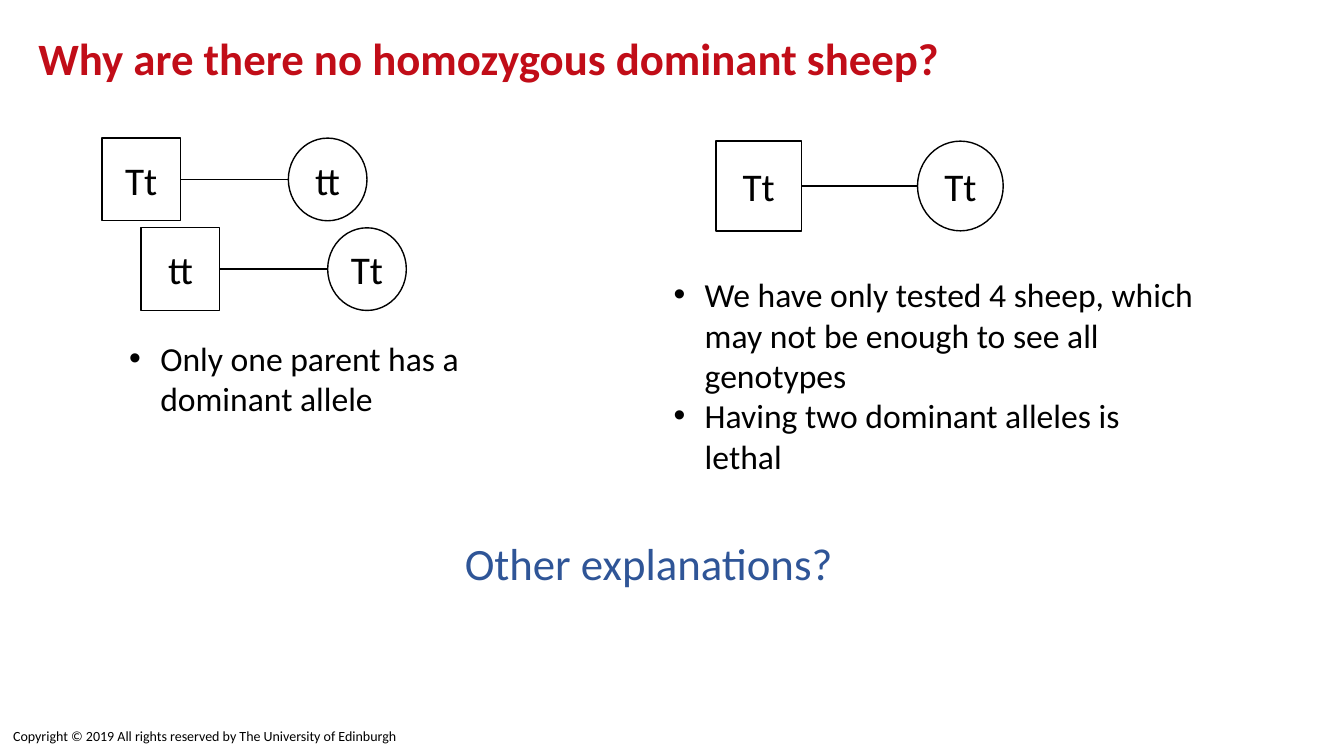
from lxml.etree import SubElement
from pptx import Presentation
from pptx.dml.color import RGBColor
from pptx.enum.shapes import MSO_CONNECTOR, MSO_SHAPE
from pptx.enum.text import MSO_ANCHOR, MSO_AUTO_SIZE, PP_ALIGN
from pptx.oxml.ns import qn
from pptx.util import Inches, Pt

RED = RGBColor(0xC1, 0x0D, 0x18)
BLUE = RGBColor(0x2F, 0x55, 0x97)
BLACK = RGBColor(0, 0, 0)

TITLE = "Why are there no homozygous dominant sheep?"
QUESTION = "Other explanations?"
COPYRIGHT = "Copyright © 2019 All rights reserved by The University of Edinburgh"
# Each cross: male, female, left, top, symbol width, symbol height, line length
CROSSES = [
    ("Tt", "tt", 1.01, 1.37, 0.78, 0.82, 1.07),
    ("tt", "Tt", 1.4, 2.26, 0.78, 0.82, 1.07),
    ("Tt", "Tt", 7.1, 1.4, 0.85, 0.89, 1.15),
]
EXPLANATIONS = [
    ((1.18, 3.3, 3.84, 0.91), ["Only one parent has a dominant allele"]),
    ((6.58, 2.67, 5.39, 2.12), [
        "We have only tested 4 sheep, which may not be enough to see all genotypes",
        "Having two dominant alleles is lethal",
    ]),
]

CENTRED = {"alignment": PP_ALIGN.CENTER}
TIGHT = {"line_spacing": 0.9}
LEFT = {"alignment": PP_ALIGN.LEFT}
PLAIN = {"space_before": Pt(0), "line_spacing": 1.0}
MIDDLE = {"vertical_anchor": MSO_ANCHOR.MIDDLE}
TOP = {"vertical_anchor": MSO_ANCHOR.TOP}
SIDES = ("margin_left", "margin_top", "margin_right", "margin_bottom")
BULLET_INDENT = Inches(0.31)


def apply(target, values):
    """Set every format value on the target."""
    for name, value in values.items():
        setattr(target, name, value)


def place(part, box):
    """Move and size a part, in inches."""
    apply(part, dict(zip(("left", "top", "width", "height"), map(Inches, box))))


def write(part, lines, size, color=BLACK, bold=False, frame={}, layout={}, bullets=False):
    """Fill a part with formatted paragraphs."""
    text_frame = part.text_frame
    text_frame.text = "\n".join(lines)
    apply(text_frame, {"word_wrap": True, "auto_size": MSO_AUTO_SIZE.NONE, **frame})
    for paragraph in text_frame.paragraphs:
        if bullets:
            properties = paragraph._p.get_or_add_pPr()
            properties.set("marL", str(BULLET_INDENT))
            properties.set("indent", str(-BULLET_INDENT))
            SubElement(properties, qn("a:buFont"), typeface="Arial")
            SubElement(properties, qn("a:buChar"), char="•")
        apply(paragraph, {**PLAIN, **layout})
        for run in paragraph.runs:
            apply(run.font, {"name": "Calibri", "size": Pt(size), "bold": bold})
            run.font.color.rgb = color


def outline(line):
    """Draw a thin black line."""
    line.color.rgb = BLACK
    line.width = Pt(1)


def add_cross(slide, male, female, left, top, width, height, gap):
    """Draw a square male joined to a round female."""
    parents = [(MSO_SHAPE.RECTANGLE, male, left),
               (MSO_SHAPE.OVAL, female, left + width + gap)]
    for symbol, genotype, x in parents:
        parent = slide.shapes.add_shape(symbol, *map(Inches, (x, top, width, height)))
        parent.shadow.inherit = False
        parent.fill.background()
        outline(parent.line)
        write(parent, [genotype], 28, layout=CENTRED,
              frame={**MIDDLE, **dict.fromkeys(SIDES, 0), "word_wrap": False})
    middle = top + height / 2
    mating = slide.shapes.add_connector(
        MSO_CONNECTOR.STRAIGHT,
        *map(Inches, (left + width, middle, left + width + gap, middle)))
    outline(mating.line)
    SubElement(mating._element.spPr, qn("a:effectLst"))


def main():
    """Build the slide and save it."""
    deck = Presentation()
    deck.slide_width, deck.slide_height = Inches(13.33), Inches(7.5)
    slide = deck.slides.add_slide(deck.slide_layouts[3])
    title, *lists = slide.placeholders

    place(title, (0.28, 0.25, 12.56, 0.71))
    write(title, [TITLE], 32, RED, True, MIDDLE, {**LEFT, **TIGHT})
    for cross in CROSSES:
        add_cross(slide, *cross)
    for explanation, (box, lines) in zip(lists, EXPLANATIONS):
        place(explanation, box)
        write(explanation, lines, 24, frame=TOP, layout=LEFT, bullets=True)

    question = slide.shapes.add_textbox(*map(Inches, (4.48, 5.26, 3.91, 0.71)))
    write(question, [QUESTION], 32, BLUE, frame=MIDDLE, layout={**CENTRED, **TIGHT})
    footer = slide.shapes.add_textbox(*map(Inches, (0.09, 7.18, 3.92, 0.3)))
    write(footer, [COPYRIGHT], 10, frame=dict.fromkeys(SIDES, Inches(0.04)))
    deck.save("out.pptx")


if __name__ == "__main__":
    main()
